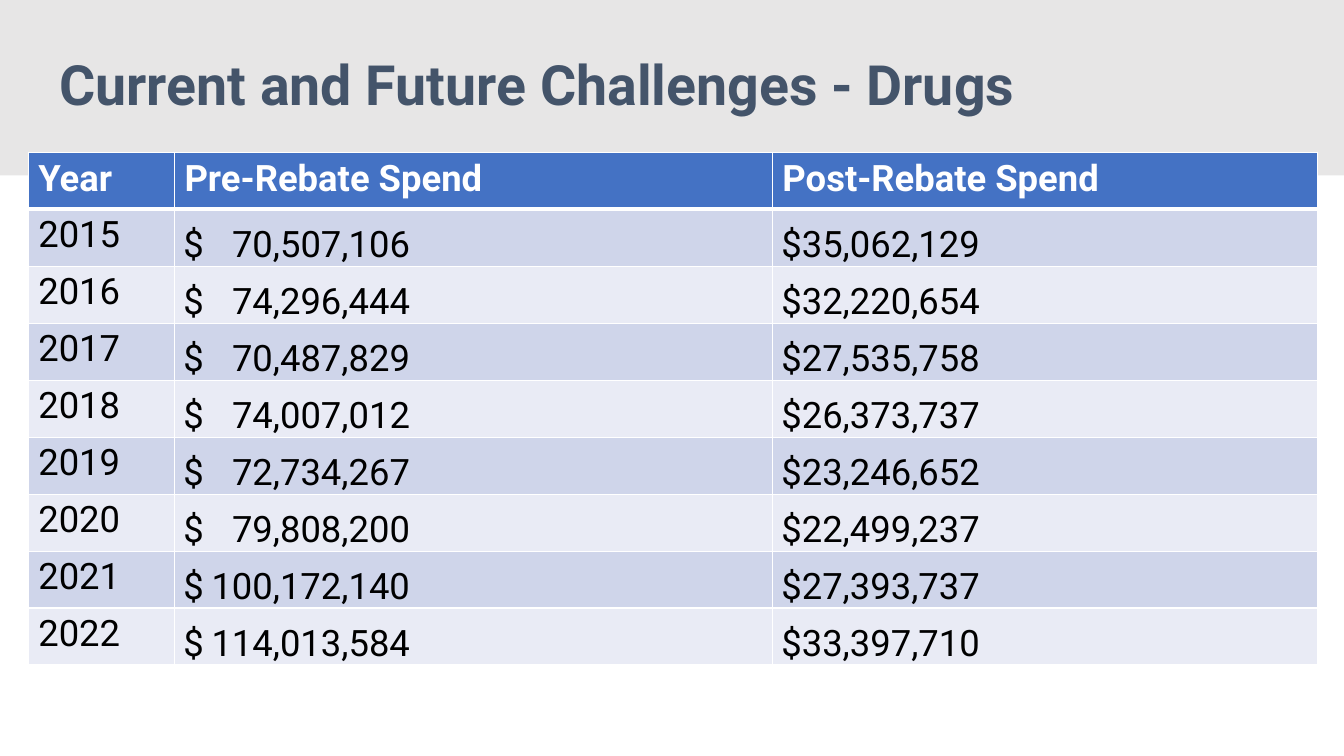
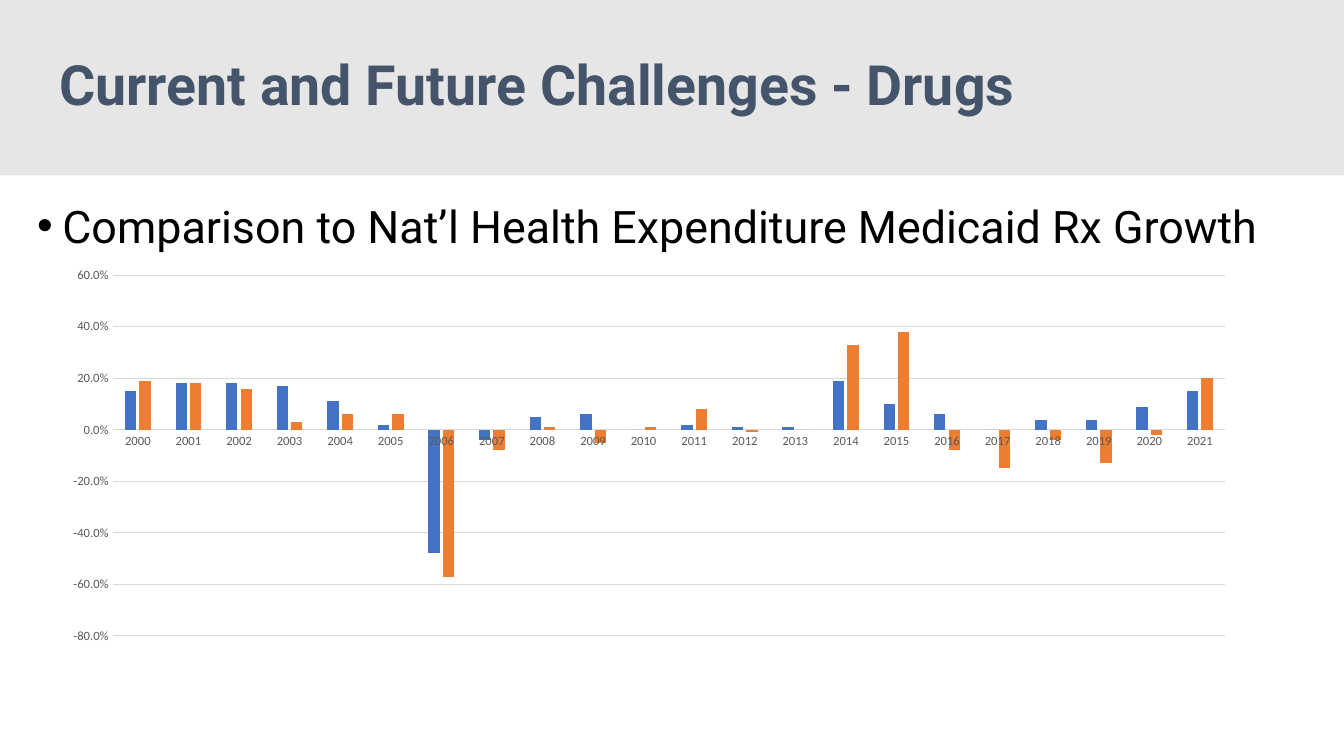
from lxml import etree
from pptx import Presentation
from pptx.chart.data import CategoryChartData
from pptx.dml.color import RGBColor
from pptx.enum.chart import XL_CHART_TYPE, XL_TICK_MARK
from pptx.enum.shapes import MSO_SHAPE
from pptx.enum.text import MSO_ANCHOR
from pptx.oxml.ns import qn
from pptx.util import Inches, Pt

RECT = MSO_SHAPE.RECTANGLE
COLUMN = XL_CHART_TYPE.COLUMN_CLUSTERED
NO_TICK = XL_TICK_MARK.NONE
TOP, MIDDLE, BOTTOM = MSO_ANCHOR.TOP, MSO_ANCHOR.MIDDLE, MSO_ANCHOR.BOTTOM

WHITE = RGBColor(0xFF, 0xFF, 0xFF)
BLACK = RGBColor(0, 0, 0)
SLATE = RGBColor(0x44, 0x54, 0x6A)
PALE = RGBColor(0xE7, 0xE6, 0xE6)
BLUE = RGBColor(0x44, 0x72, 0xC4)
ORANGE = RGBColor(0xED, 0x7D, 0x31)
DARK_ROW = RGBColor(0xCF, 0xD5, 0xEA)
LIGHT_ROW = RGBColor(0xE9, 0xEB, 0xF5)
GRID = RGBColor(0xD9, 0xD9, 0xD9)
LABEL = RGBColor(0x59, 0x59, 0x59)

TITLE = "Current and Future Challenges - Drugs"
HEADS = ["Year", "Pre-Rebate Spend", "Post-Rebate Spend"]
SPEND = [
    ("2015", "70,507,106", "35,062,129"),
    ("2016", "74,296,444", "32,220,654"),
    ("2017", "70,487,829", "27,535,758"),
    ("2018", "74,007,012", "26,373,737"),
    ("2019", "72,734,267", "23,246,652"),
    ("2020", "79,808,200", "22,499,237"),
    ("2021", "100,172,140", "27,393,737"),
    ("2022", "114,013,584", "33,397,710"),
]
YEARS = [str(year) for year in range(2000, 2022)]
GROWTH = [
    ("Series 1", BLUE,
     [0.15, 0.18, 0.18, 0.17, 0.11, 0.02, -0.48, -0.04, 0.05, 0.06, 0,
      0.02, 0.01, 0.01, 0.19, 0.1, 0.06, 0, 0.04, 0.04, 0.09, 0.15]),
    ("Series 2", ORANGE,
     [0.19, 0.18, 0.16, 0.03, 0.06, 0.06, -0.57, -0.08, 0.01, -0.05, 0.01,
      0.08, -0.01, 0, 0.33, 0.38, -0.08, -0.15, -0.04, -0.13, -0.02, 0.2]),
]


class Deck:
    font = "Roboto"
    chart_font = "Calibri"

    def __init__(self):
        self.prs = Presentation()
        self.prs.slide_width = Inches(13.33)
        self.prs.slide_height = Inches(7.5)
        self.slide = None

    def start(self, title):
        self.slide = self.prs.slides.add_slide(self.prs.slide_layouts[6])
        band = self.slide.shapes.add_shape(
            RECT, 0, 0, self.prs.slide_width, Inches(1.74))
        band.shadow.inherit = False
        band.fill.solid()
        band.fill.fore_color.rgb = PALE
        band.line.fill.background()
        para = self.box(0.49, 0.57, 12.35, 0.6, MIDDLE)
        para.line_spacing = 0.9
        self.run(para, title, 39.6, SLATE, True)

    def box(self, left, top, width, height, anchor=TOP):
        frame = self.slide.shapes.add_textbox(
            Inches(left), Inches(top), Inches(width), Inches(height)).text_frame
        frame.word_wrap = True
        frame.vertical_anchor = anchor
        return frame.paragraphs[0]

    def run(self, para, text, size, color, bold=False):
        run = para.add_run()
        run.text = text
        self.style(run.font, self.font, size, color)
        run.font.bold = bold

    def style(self, font, name, size, color):
        font.name = name
        font.size = Pt(size)
        font.color.rgb = color

    def bullet(self, text, left, top, width, height):
        para = self.box(left, top, width, height)
        props = para._p.get_or_add_pPr()
        props.set("marL", str(Inches(0.25)))
        props.set("indent", str(Inches(-0.25)))
        etree.SubElement(props, qn("a:buFont"), typeface="Arial")
        etree.SubElement(props, qn("a:buChar"), char="•")
        self.run(para, text, 32, BLACK)

    def tab(self, para, stop):
        tabs = etree.SubElement(para._p.get_or_add_pPr(), qn("a:tabLst"))
        etree.SubElement(tabs, qn("a:tab"), pos=str(Inches(stop)), algn="r")

    def edge(self, cell, **widths):
        props = cell._tc.get_or_add_tcPr()
        for spot, side in enumerate("LRTB"):
            line = etree.Element(qn("a:ln" + side), w=str(Pt(widths.get(side, 1))))
            fill = etree.SubElement(line, qn("a:solidFill"))
            etree.SubElement(fill, qn("a:srgbClr"), val=str(WHITE))
            props.insert(spot, line)

    def cell(self, cell, text, fill, color, bold=False):
        cell.fill.solid()
        cell.fill.fore_color.rgb = fill
        self.run(cell.text_frame.paragraphs[0], text, 26, color, bold)

    def money(self, cell, text, fill):
        cell.vertical_anchor = BOTTOM
        cell.margin_left = Inches(0.09)
        cell.margin_right = cell.margin_top = cell.margin_bottom = 0
        self.cell(cell, text, fill, BLACK)

    def table(self, heads, rows, left, top, widths, height):
        count = len(rows) + 1
        table = self.slide.shapes.add_table(
            count, len(heads), Inches(left), Inches(top),
            Inches(sum(widths)), Inches(height)).table
        for column, width in zip(table.columns, widths):
            column.width = Inches(width)
        for row in table.rows:
            row.height = Inches(height / count)
        for spot, head in enumerate(heads):
            cell = table.cell(0, spot)
            self.cell(cell, head, BLUE, WHITE, True)
            self.edge(cell, B=3)
        for index, (year, gross, net) in enumerate(rows, 1):
            fill = DARK_ROW if index % 2 else LIGHT_ROW
            first, second, third = table.rows[index].cells
            self.cell(first, year, fill, BLACK)
            self.tab(second.text_frame.paragraphs[0], 2.25)
            self.money(second, "$\t" + gross, fill)
            self.money(third, "$" + net, fill)
            for cell in (first, second, third):
                self.edge(cell, T=3 if index == 1 else 1)

    def chart(self, cats, series, left, top, width, height):
        data = CategoryChartData(number_format="0.0%")
        data.categories = cats
        for name, color, values in series:
            data.add_series(name, values)
        chart = self.slide.shapes.add_chart(
            COLUMN, Inches(left), Inches(top), Inches(width), Inches(height),
            data).chart
        chart.has_legend = False
        chart.has_title = False
        self.style(chart.font, self.chart_font, 10, BLACK)
        plot = chart.plots[0]
        plot.vary_by_categories = False
        plot.gap_width = 219
        plot.overlap = -27
        for bars, (name, color, values) in zip(plot.series, series):
            bars.invert_if_negative = False
            bars.format.fill.solid()
            bars.format.fill.fore_color.rgb = color
        for axis in (chart.category_axis, chart.value_axis):
            axis.major_tick_mark = axis.minor_tick_mark = NO_TICK
            self.style(axis.tick_labels.font, self.chart_font, 9, LABEL)
        self.rule(chart.category_axis.format.line)
        scale = chart.value_axis
        scale.minimum_scale = -0.8
        scale.maximum_scale = 0.6
        scale.major_unit = 0.2
        scale.tick_labels.number_format = "0.0%"
        scale.tick_labels.number_format_is_linked = False
        scale.format.line.fill.background()
        self.rule(scale.major_gridlines.format.line)

    def rule(self, line):
        line.color.rgb = GRID
        line.width = Pt(0.75)


def main():
    deck = Deck()
    deck.start(TITLE)
    deck.table(HEADS, SPEND, 0.28, 1.51, [1.45, 5.93, 5.41], 5.09)
    deck.start(TITLE)
    deck.bullet("Comparison to Nat’l Health Expenditure Medicaid Rx Growth",
                0.27, 1.92, 12.35, 0.62)
    deck.chart(YEARS, GROWTH, 0.49, 2.58, 11.9, 3.88)
    deck.prs.save("out.pptx")


if __name__ == "__main__":
    main()
